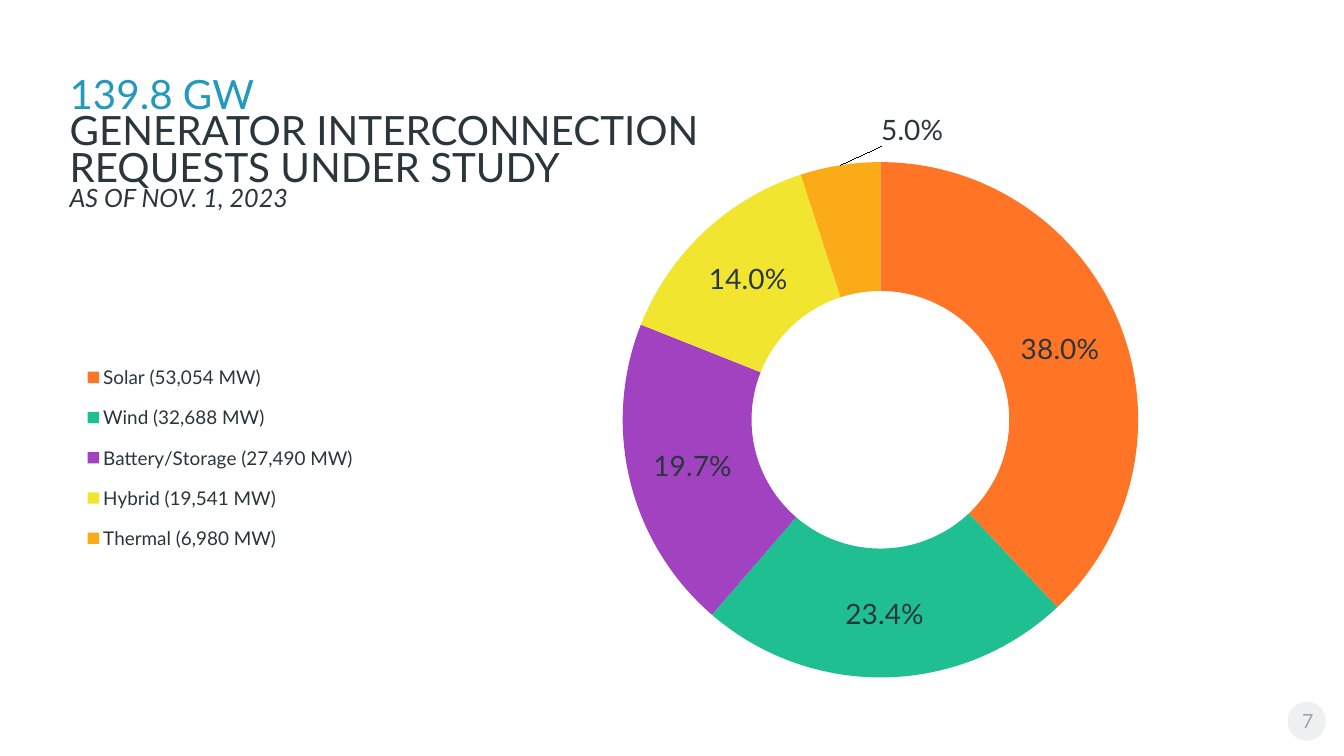
from lxml import etree
from pptx import Presentation
from pptx.chart.data import CategoryChartData
from pptx.dml.color import RGBColor
from pptx.enum.chart import XL_CHART_TYPE as ChartType, XL_LEGEND_POSITION as LegendPosition
from pptx.enum.shapes import MSO_SHAPE as Shape
from pptx.enum.text import MSO_ANCHOR as Anchor, MSO_AUTO_SIZE as AutoSize, PP_ALIGN as Align
from pptx.oxml.ns import qn
from pptx.util import Inches, Pt

FONT = "Lato"
INK = RGBColor(0x2A, 0x36, 0x3B)
BLUE = RGBColor(0x23, 0x99, 0xBB)
GREY = RGBColor(0x99, 0xA4, 0xAD)
PALE = RGBColor(0xEE, 0xF0, 0xF1)

# Category, share, colour
SOURCES = [
    ("Solar (53,054 MW)", 0.38, RGBColor(0xFF, 0x75, 0x25)),
    ("Wind (32,688 MW)", 0.234, RGBColor(0x1F, 0xBF, 0x92)),
    ("Battery/Storage (27,490 MW)", 0.197, RGBColor(0xA1, 0x42, 0xC0)),
    ("Hybrid (19,541 MW)", 0.14, RGBColor(0xF2, 0xE5, 0x30)),
    ("Thermal (6,980 MW)", 0.05, RGBColor(0xFB, 0xAB, 0x18)),
]

TITLE_LINES = [
    ("139.8 GW", {"size": Pt(28.8)}, BLUE),
    ("GENERATOR INTERCONNECTION REQUESTS UNDER STUDY", {"size": Pt(28.8)}, INK),
    ("AS OF NOV. 1, 2023", {"size": Pt(18), "italic": True}, INK),
]


def set_all(target, values):
    for name, value in values.items():
        setattr(target, name, value)


def style_font(font, color, **values):
    set_all(font, {"name": FONT, "bold": False, **values})
    font.color.rgb = color


def make_layout(**values):
    """Return a manual chart layout made of fractions of the chart area."""
    layout = etree.Element(qn("c:layout"))
    manual = etree.SubElement(layout, qn("c:manualLayout"))
    for name, value in values.items():
        etree.SubElement(manual, qn("c:" + name)).set("val", str(value))
    return layout


def add_title(page):
    title = page.shapes.title
    set_all(title, {"left": Inches(0.59), "top": Inches(0.75),
                    "width": Inches(7.33), "height": Inches(1.08)})
    set_all(title.text_frame, {"word_wrap": True, "vertical_anchor": Anchor.TOP,
                               "auto_size": AutoSize.NONE})
    para = title.text_frame.paragraphs[0]
    set_all(para, {"alignment": Align.LEFT, "line_spacing": 0.75})
    for index, (text, values, color) in enumerate(TITLE_LINES):
        if index:
            para.add_line_break()
        span = para.add_run()
        span.text = text
        style_font(span.font, color, **values)


def add_labels(series):
    labels = series.data_labels
    set_all(labels, {"show_value": True, "show_percentage": False,
                     "number_format": "0.0%", "number_format_is_linked": False})
    style_font(labels.font, INK, size=Pt(20))

    # The narrow last slice has its label outside the ring
    last = len(SOURCES) - 1
    style_font(series.points[last].data_label.font, INK, size=Pt(20))
    label = labels._element.find(qn("c:dLbl"))
    label.insert(1, make_layout(x=0.05, y=-0.16))


def add_doughnut(page):
    data = CategoryChartData(number_format="0.0%")
    data.categories = [name for name, _, _ in SOURCES]
    data.add_series("Series 1", [share for _, share, _ in SOURCES])
    chart = page.shapes.add_chart(
        ChartType.DOUGHNUT, Inches(0.46), Inches(0.86),
        Inches(12.32), Inches(6.19), data).chart
    set_all(chart, {"has_title": False, "has_legend": True})
    style_font(chart.font, INK, size=Pt(13.5))

    # Slices
    plot = chart.plots[0]
    plot.vary_by_categories = True
    series = plot.series[0]
    for index, (_, _, color) in enumerate(SOURCES):
        slice_format = series.points[index].format
        slice_format.fill.solid()
        slice_format.fill.fore_color.rgb = color
        slice_format.line.fill.background()
    add_labels(series)

    # Legend and ring positions
    legend = chart.legend
    set_all(legend, {"position": LegendPosition.LEFT, "include_in_layout": False})
    style_font(legend.font, INK, size=Pt(13.5))
    legend_element = legend._element
    plot_area = plot._element.getparent()
    for parent in (legend_element, plot_area):
        for old in parent.findall(qn("c:layout")):
            parent.remove(old)
    legend_element.insert(1, make_layout(
        xMode="edge", yMode="edge", x=0.015, y=0.42, w=0.25, h=0.35))
    plot_area.insert(0, make_layout(
        layoutTarget="inner", xMode="edge", yMode="edge",
        x=0.464, y=0.121, w=0.415, h=0.826))


def add_page_number(page, number):
    disc = page.shapes.add_shape(
        Shape.OVAL, Inches(12.77), Inches(6.96), Inches(0.38), Inches(0.39))
    disc.shadow.inherit = False
    disc.fill.solid()
    disc.fill.fore_color.rgb = PALE
    disc.line.fill.background()

    box = page.shapes.add_textbox(
        Inches(12.77), Inches(6.92), Inches(0.4), Inches(0.4))
    set_all(box.text_frame, {
        "word_wrap": True, "vertical_anchor": Anchor.BOTTOM,
        "margin_left": Inches(0.03), "margin_right": Inches(0.03)})
    para = box.text_frame.paragraphs[0]
    para.alignment = Align.CENTER
    span = para.add_run()
    span.text = number
    style_font(span.font, GREY, size=Pt(14))


def main():
    deck = Presentation()
    set_all(deck, {"slide_width": Inches(13.33), "slide_height": Inches(7.5)})
    page = deck.slides.add_slide(deck.slide_layouts[5])
    add_page_number(page, "7")
    add_doughnut(page)
    add_title(page)
    deck.save("out.pptx")


if __name__ == "__main__":
    main()
